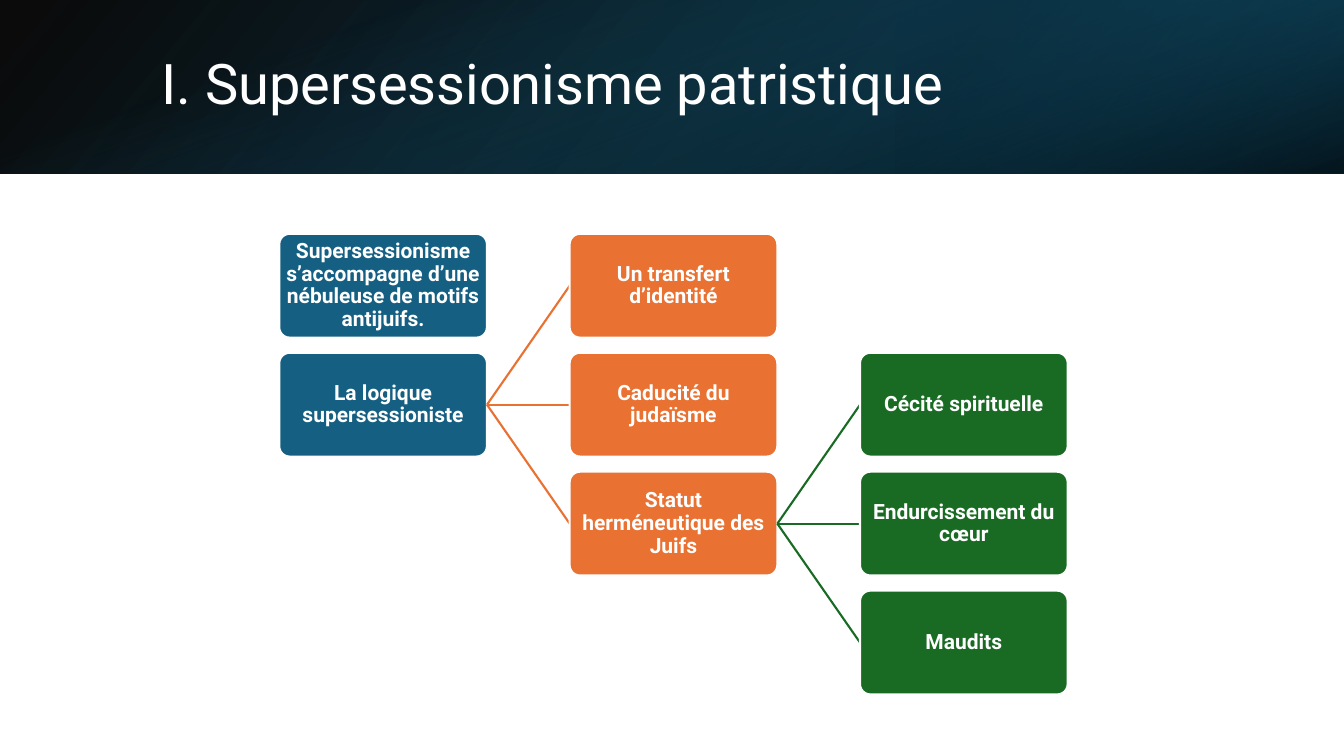
import lxml.etree
import pptx
import pptx.dml.color
import pptx.enum.shapes
import pptx.enum.text
import pptx.oxml.ns
import pptx.util

FONT = "Roboto"
WHITE, BLUE, ORANGE, GREEN = "FFFFFF", "156082", "E97132", "196B24"
WIDTH, HEIGHT, BAND = 13.33, 7.5, 1.72
LEFT, TOP = 2.77, 2.32
COLUMN_STEP, ROW_STEP = 2.88, 1.18
BOX_WIDTH, BOX_HEIGHT = 2.06, 1.03

inch = pptx.util.Inches
color = pptx.dml.color.RGBColor.from_string
qn = pptx.oxml.ns.qn
shape_type = pptx.enum.shapes.MSO_SHAPE


def write(shape, text, size, bold=False, align=pptx.enum.text.PP_ALIGN.LEFT, inset=None):
    frame = shape.text_frame
    frame.word_wrap = True
    frame.vertical_anchor = pptx.enum.text.MSO_ANCHOR.MIDDLE
    if inset is not None:
        frame.margin_left = frame.margin_right = inch(inset)
        frame.margin_top = frame.margin_bottom = inch(inset)
    para = frame.paragraphs[0]
    para.alignment = align
    para.line_spacing = 0.9
    span = para.add_run()
    span.text = text
    span.font.name = FONT
    span.font.size = pptx.util.Pt(size)
    span.font.bold = bold
    span.font.color.rgb = color(WHITE)


deck = pptx.Presentation()
deck.slide_width, deck.slide_height = inch(WIDTH), inch(HEIGHT)
page = deck.slides.add_slide(deck.slide_layouts[5])
shapes = page.shapes

# Header: three translucent gradients; stops are (position, colour, opacity) in percent
middle = (WIDTH - BAND) / 2
bands = [
    ((0, 0, WIDTH, BAND), 0, True, 140, [(0, "000000", 96), (100, "104862", 100)]),
    ((WIDTH * 2 / 3, 0, WIDTH / 3, BAND), 180, True, 320, [(19, "0B3041", 68), (100, BLUE, 79)]),
    ((middle, -middle, BAND, WIDTH), 90, False, 340, [(23, BLUE, 0), (99, "000000", 74)]),
]
for place, rotation, flipped, angle, stops in bands:
    band = shapes.add_shape(shape_type.RECTANGLE, *map(inch, place))
    band.shadow.inherit = False
    band.line.fill.background()
    band.rotation = rotation
    if flipped:
        band._element.spPr.find(qn("a:xfrm")).set("flipH", "1")
    band.fill.gradient()
    band.fill.gradient_angle = 360 - angle
    for stop, (position, shade, opacity) in zip(band.fill.gradient_stops, stops):
        stop.position = position / 100
        stop.color.rgb = color(shade)
    for tint, (position, shade, opacity) in zip(band._element.spPr.iter(qn("a:srgbClr")), stops):
        lxml.etree.SubElement(tint, qn("a:alpha")).set("val", str(opacity * 1000))

title = shapes.title
title.left, title.top, title.width, title.height = map(inch, (1.5, 0.38, 10.98, 0.96))
write(title, "I. Supersessionisme patristique", 40)
band._element.addnext(title._element)  # title in front of the header

# Tree: text, column, row, text of the parent
nodes = [
    ("Supersessionisme s’accompagne d’une nébuleuse de motifs antijuifs.", 0, 0, None),
    ("La logique supersessioniste", 0, 1, None),
    ("Un transfert d’identité", 1, 0, "La logique supersessioniste"),
    ("Caducité du judaïsme", 1, 1, "La logique supersessioniste"),
    ("Statut herméneutique des Juifs", 1, 2, "La logique supersessioniste"),
    ("Cécité spirituelle", 2, 1, "Statut herméneutique des Juifs"),
    ("Endurcissement du cœur", 2, 2, "Statut herméneutique des Juifs"),
    ("Maudits", 2, 3, "Statut herméneutique des Juifs"),
]
boxes = {}
for text, column, row, parent in nodes:
    shade = (BLUE, ORANGE, GREEN)[column]
    box = shapes.add_shape(
        shape_type.ROUNDED_RECTANGLE,
        inch(LEFT + column * COLUMN_STEP), inch(TOP + row * ROW_STEP),
        inch(BOX_WIDTH), inch(BOX_HEIGHT))
    box.adjustments[0] = 0.1
    box.shadow.inherit = False
    box.fill.solid()
    box.fill.fore_color.rgb = color(shade)
    box.line.color.rgb = color(WHITE)
    box.line.width = pptx.util.Pt(1.5)
    write(box, text, 15, bold=True, align=pptx.enum.text.PP_ALIGN.CENTER, inset=0.01)
    boxes[text] = box
    if parent:
        branch = shapes.add_connector(pptx.enum.shapes.MSO_CONNECTOR.STRAIGHT, 0, 0, 0, 0)
        branch.begin_connect(boxes[parent], 3)
        branch.end_connect(box, 1)
        branch.line.color.rgb = color(shade)
        branch.line.width = pptx.util.Pt(1.5)
        lxml.etree.SubElement(branch._element.spPr, qn("a:effectLst"))
        box._element.addprevious(branch._element)  # branch behind its box

deck.save("out.pptx")
